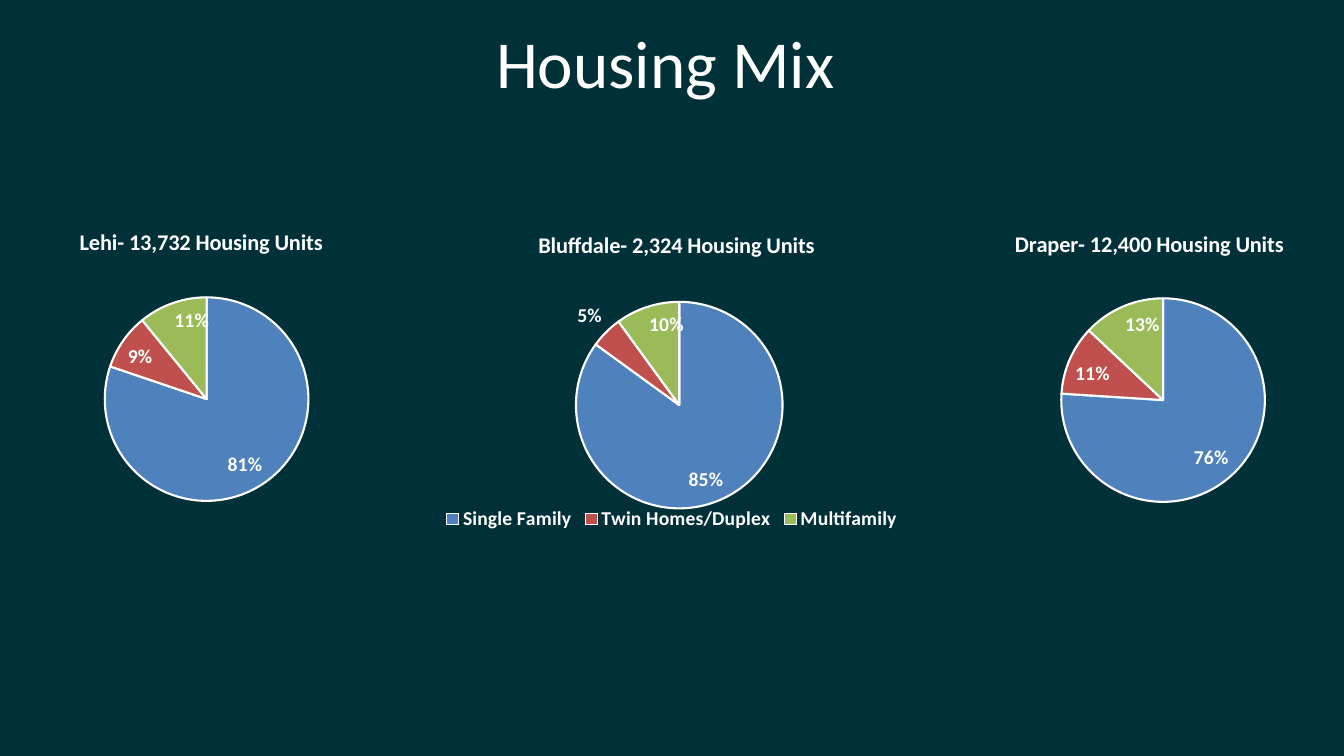
import pptx
import pptx.util
import pptx.chart.data
import pptx.dml.color
import pptx.enum.chart
import pptx.enum.text
import pptx.oxml

COLORS = {
    "back": "003038",
    "text": "FFFFFF",
    "single": "4F81BD",
    "twin": "C0504D",
    "multi": "9BBB59",
}
WIDTH, HEIGHT = pptx.util.Inches(13.33), pptx.util.Inches(7.5)
COLS, ROWS = 48, 30
KINDS = ("Single Family", "Twin Homes/Duplex", "Multifamily")
SLICES = ("single", "twin", "multi")
SPOTS = pptx.enum.chart.XL_LABEL_POSITION

CITIES = (
    {
        "title": "Lehi- 13,732 Housing Units",
        "values": (0.81, 0.09, 0.11),
        "frame": (-2.09, 8.2, 18.32, 12.2),
        "head": (2.7, 8.86),
        "pie": (7.38, 15.84, 8.08),
    },
    {
        "title": "Bluffdale- 2,324 Housing Units",
        "values": (0.85, 0.05, 0.1),
        "frame": (15.26, 8.2, 17.46, 14.04),
        "head": (19.08, 8.96),
        "pie": (24.26, 16.08, 8.2),
        "legend": (15.7, 20.1, 16.6, 1.0),
        "outer": 1,
    },
    {
        "title": "Draper- 12,400 Housing Units",
        "values": (0.76, 0.11, 0.13),
        "frame": (31.72, 8.2, 18.4, 12.24),
        "head": (36.1, 8.92),
        "pie": (41.54, 15.88, 8.08),
    },
)


def tint(name):
    return pptx.dml.color.RGBColor.from_string(COLORS[name])


def across(cols):
    return round(WIDTH * cols / COLS)


def down(rows):
    return round(HEIGHT * rows / ROWS)


def assign(target, values):
    for name, value in values.items():
        setattr(target, name, value)


def style(font, size, bold=True):
    assign(font, {"name": "Calibri", "size": pptx.util.Pt(size), "bold": bold})
    font.color.rgb = tint("text")


def put(shape, left, top, width, height):
    assign(shape, {
        "left": across(left), "top": down(top),
        "width": across(width), "height": down(height),
    })


def arrange(node, index, frame, box, inner=False):
    left, top, width, height = frame
    shares = [(box[0] - left) / width, (box[1] - top) / height]
    if len(box) == 4:
        shares += [box[2] / width, box[3] / height]
    marks = '<c:layoutTarget val="inner"/>' if inner else ""
    marks += '<c:xMode val="edge"/><c:yMode val="edge"/>'
    for name, share in zip("xywh", shares):
        marks += f'<c:{name} val="{share:.4f}"/>'
    for old in node.xpath("c:layout"):
        node.remove(old)
    space = "http://schemas.openxmlformats.org/drawingml/2006/chart"
    node.insert(index, pptx.oxml.parse_xml(
        f'<c:layout xmlns:c="{space}"><c:manualLayout>{marks}'
        "</c:manualLayout></c:layout>"
    ))


def add_head(chart, city):
    frame = chart.chart_title.text_frame
    frame.text = city["title"]
    style(frame.paragraphs[0].runs[0].font, 16)
    chart.chart_title.include_in_layout = False
    arrange(chart.chart_title._element, 1, city["frame"], city["head"])


def paint(series):
    for index, name in enumerate(SLICES):
        form = series.points[index].format
        form.fill.solid()
        form.fill.fore_color.rgb = tint(name)
        form.line.color.rgb = tint("text")
        form.line.width = pptx.util.Pt(1.5)


def add_labels(series, city):
    labels = series.data_labels
    assign(labels, {
        "show_value": True,
        "show_percentage": False,
        "number_format": "0%",
        "number_format_is_linked": False,
        "position": SPOTS.INSIDE_END,
    })
    style(labels.font, 14)
    if "outer" in city:
        label = series.points[city["outer"]].data_label
        style(label.font, 14)
        label.position = SPOTS.OUTSIDE_END


def add_legend(chart, city):
    chart.has_legend = "legend" in city
    if chart.has_legend:
        assign(chart.legend, {
            "position": pptx.enum.chart.XL_LEGEND_POSITION.BOTTOM,
            "include_in_layout": False,
        })
        style(chart.legend.font, 14)
        arrange(chart.legend._element, 1, city["frame"], city["legend"])


def add_pie(slide, city):
    data = pptx.chart.data.CategoryChartData(number_format="0%")
    data.categories = KINDS
    data.add_series("Series 1", city["values"])
    left, top, width, height = city["frame"]
    chart = slide.shapes.add_chart(
        pptx.enum.chart.XL_CHART_TYPE.PIE,
        across(left), down(top), across(width), down(height), data,
    ).chart
    style(chart.font, 10, False)
    add_head(chart, city)
    plot = chart.plots[0]
    plot.vary_by_categories = True
    paint(plot.series[0])
    add_labels(plot.series[0], city)
    add_legend(chart, city)
    mid, center, size = city["pie"]
    span = size * down(1) / across(1)
    box = (mid - span / 2, center - size / 2, span, size)
    area = chart._chartSpace.xpath("c:chart/c:plotArea")[0]
    arrange(area, 0, city["frame"], box, True)


def add_title(slide, text):
    title = slide.shapes.title
    put(title, 2.16, 0.4, 43.2, 4.12)
    title.text = text
    title.text_frame.vertical_anchor = pptx.enum.text.MSO_ANCHOR.MIDDLE
    line = title.text_frame.paragraphs[0]
    line.alignment = pptx.enum.text.PP_ALIGN.CENTER
    style(line.runs[0].font, 48, False)


def main():
    deck = pptx.Presentation()
    assign(deck, {"slide_width": WIDTH, "slide_height": HEIGHT})
    slide = deck.slides.add_slide(deck.slide_layouts[5])
    fill = slide.background.fill
    fill.solid()
    fill.fore_color.rgb = tint("back")
    add_title(slide, "Housing Mix")
    for city in CITIES:
        add_pie(slide, city)
    deck.save("out.pptx")


if __name__ == "__main__":
    main()
